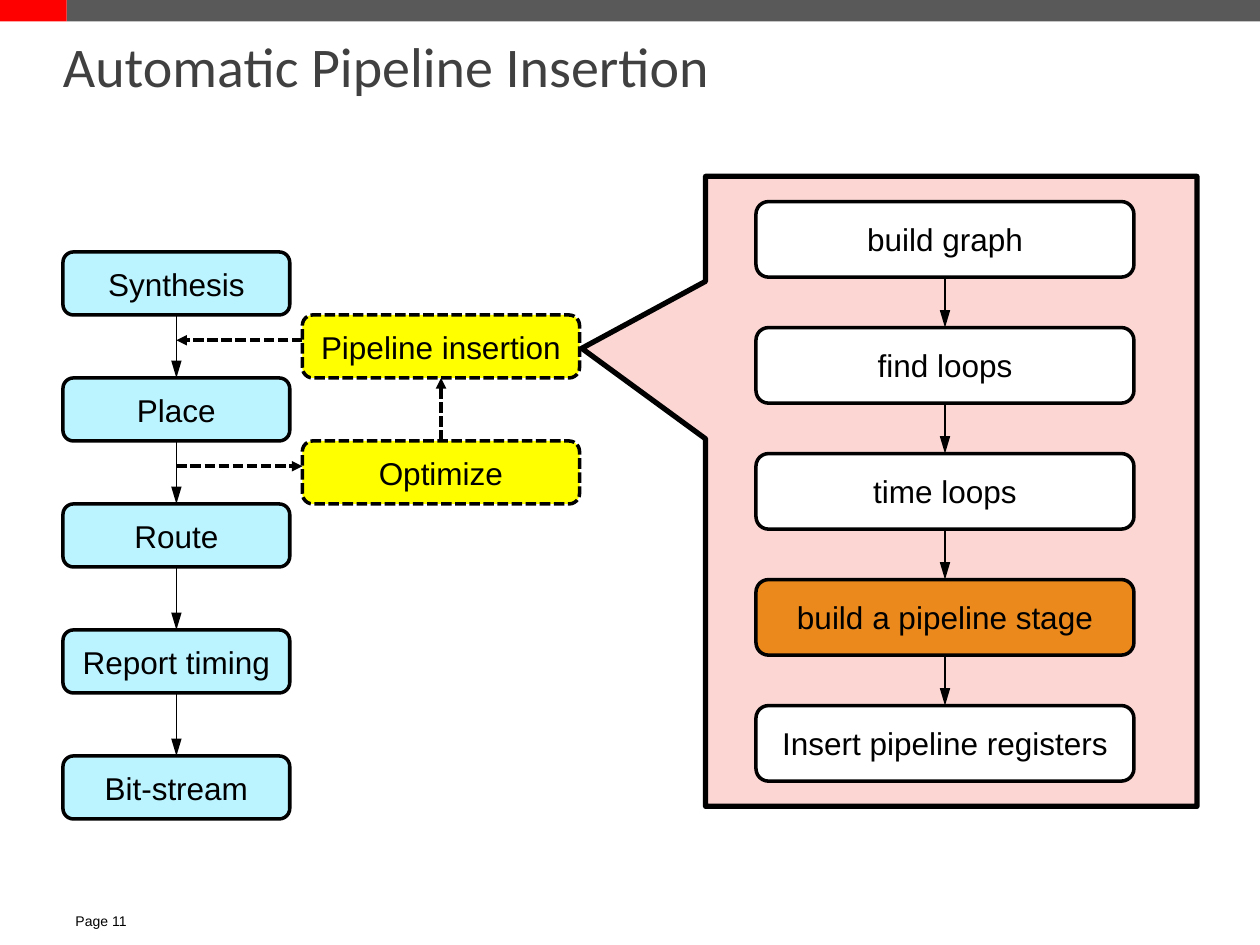
from lxml import etree
from pptx import Presentation, util as u
from pptx.dml.color import RGBColor
from pptx.enum import dml, shapes, text
from pptx.oxml.ns import qn

PX = 9144  # EMU per px, 100 px to the inch
THEME = {
    "bar": RGBColor(0x59, 0x59, 0x59),
    "accent": RGBColor(0xFF, 0x00, 0x00),
    "title": RGBColor(0x40, 0x40, 0x40),
    "ink": RGBColor(0x00, 0x00, 0x00),
    "flow": RGBColor(0xBB, 0xF4, 0xFF),
    "extra": RGBColor(0xFF, 0xFF, 0x00),
    "step": RGBColor(0xFF, 0xFF, 0xFF),
    "focus": RGBColor(0xEC, 0x89, 0x1D),
    "callout": RGBColor(0xEE, 0x34, 0x24),
    "title_size": 32,
    "label_size": 18,
    "page_size": 8,
}

presentation = Presentation()
presentation.slide_width = u.Emu(1000 * PX)
presentation.slide_height = u.Emu(750 * PX)
slide = presentation.slides.add_slide(presentation.slide_layouts[6])


def add_block(kind, box, fill, line_width=0, dashed=False):
    shape = slide.shapes.add_shape(kind, *[u.Emu(value * PX) for value in box])
    shape.shadow.inherit = False
    shape.fill.solid()
    shape.fill.fore_color.rgb = THEME[fill]
    if line_width:
        shape.line.color.rgb = THEME["ink"]
        shape.line.width = u.Pt(line_width)
    else:
        shape.line.fill.background()
    if dashed:
        shape.line.dash_style = dml.MSO_LINE.SQUARE_DOT
    return shape


def add_text(shape, wording, size, color="ink", font="Arial"):
    paragraph = shape.text_frame.paragraphs[0]
    run = paragraph.add_run()
    run.text = wording
    run.font.size = u.Pt(THEME[size])
    run.font.name = font
    run.font.color.rgb = THEME[color]
    return paragraph


# Top bar
add_block(shapes.MSO_SHAPE.RECTANGLE, (53, 0, 947, 17), "bar")
add_block(shapes.MSO_SHAPE.RECTANGLE, (0, 0, 53, 17), "accent")

# Title and page number
title = slide.shapes.add_textbox(*[u.Emu(value * PX) for value in (50, 23, 900, 60)])
title.text_frame.word_wrap = True
title.text_frame.margin_left = 0
title_paragraph = add_text(title, "Automatic Pipeline Insertion", "title_size", "title", "Calibri")
title_paragraph.line_spacing = 0.98
page = slide.shapes.add_textbox(*[u.Emu(value * PX) for value in (50, 719, 92, 27)])
page.text_frame.word_wrap = True
add_text(page, "Page 11", "page_size")

# Callout behind the insertion steps
callout = add_block(shapes.MSO_SHAPE.RECTANGULAR_CALLOUT, (560, 140, 390, 500), "callout", 3)
callout.adjustments[0] = -0.752
callout.adjustments[1] = -0.227
callout_color = callout.fill._xPr.find(qn("a:solidFill"))[0]
etree.SubElement(callout_color, qn("a:alpha"), val="20000")

# Columns of boxes: labels, left, top, width, height, fill, dashed
PITCH = 100
columns = [
    (["build graph", "find loops", "time loops", "build a pipeline stage",
      "Insert pipeline registers"], 600, 160, 300, 60, "step", False),
    (["Synthesis", "Place", "Route", "Report timing", "Bit-stream"],
     50, 200, 180, 50, "flow", False),
    (["Pipeline insertion", "Optimize"], 240, 250, 220, 50, "extra", True),
]
arrows = []  # start x, start y, end x, end y, dashed
for labels, left, top, width, height, fill, dashed in columns:
    center = left + width // 2
    for index, label in enumerate(labels):
        y = top + index * PITCH
        box_fill = "focus" if label == "build a pipeline stage" else fill
        box = add_block(shapes.MSO_SHAPE.ROUNDED_RECTANGLE,
                        (left, y, width, height), box_fill, 2, dashed)
        box.text_frame.word_wrap = True
        box.text_frame.vertical_anchor = text.MSO_ANCHOR.MIDDLE
        add_text(box, label, "label_size").alignment = text.PP_ALIGN.CENTER
        if index and not dashed:
            arrows.append((center, y - PITCH + height, center, y, False))

# Dashed detour from the main flow
arrows += [
    (140, 370, 240, 370, True),
    (350, 350, 350, 300, True),
    (240, 270, 140, 270, True),
]

# Arrows
for *ends, dashed in arrows:
    arrow = slide.shapes.add_connector(
        shapes.MSO_CONNECTOR.STRAIGHT, *[u.Emu(value * PX) for value in ends])
    arrow.line.color.rgb = THEME["ink"]
    arrow.line.width = u.Pt(2 if dashed else 1)
    if dashed:
        arrow.line.dash_style = dml.MSO_LINE.SQUARE_DOT
    etree.SubElement(arrow.line._get_or_add_ln(), qn("a:tailEnd"),
                     type="triangle", w="med", len="med" if dashed else "lg")
    etree.SubElement(arrow._element.spPr, qn("a:effectLst"))

presentation.save("out.pptx")
